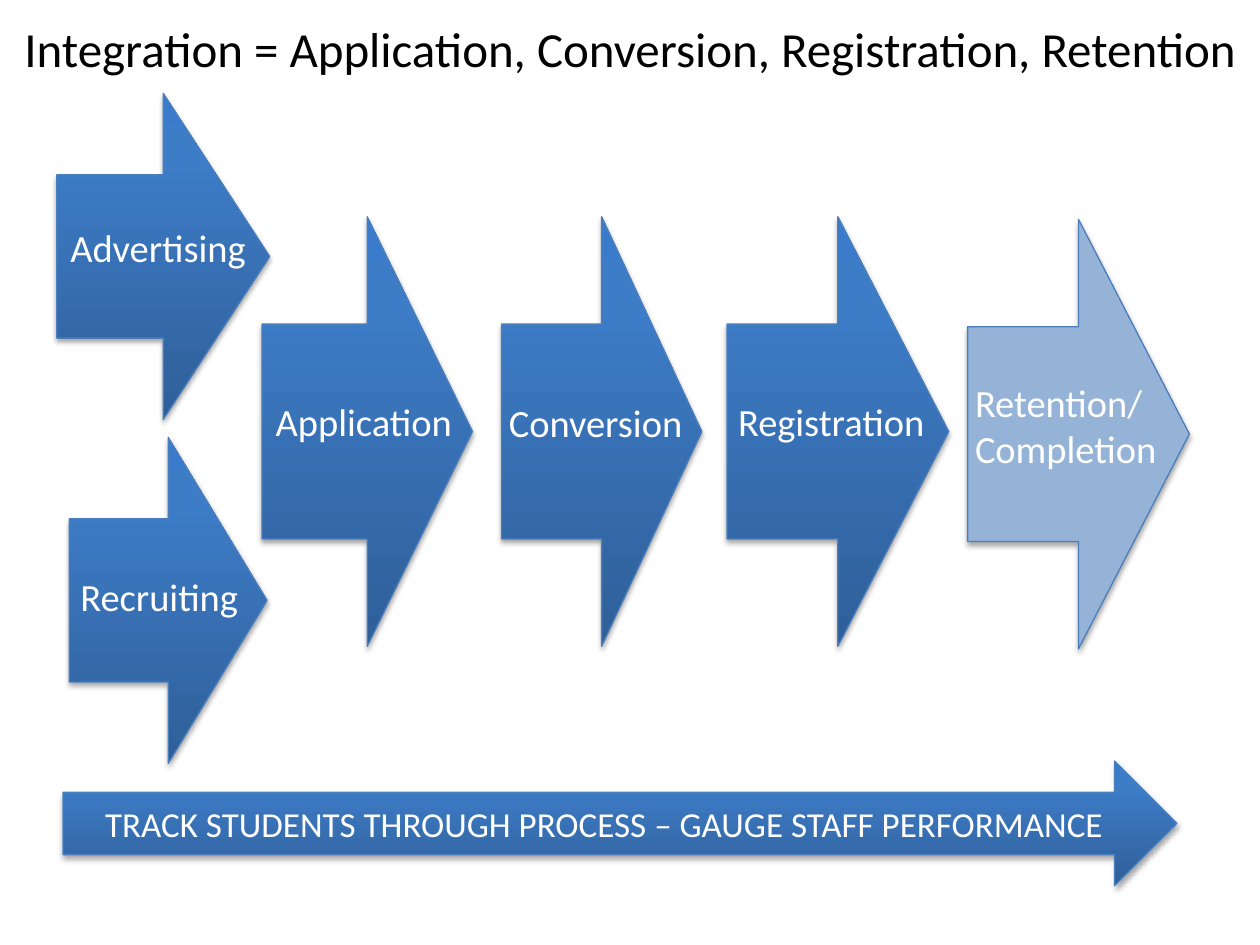
from lxml import etree
from copy import deepcopy
from pptx import Presentation
from pptx.dml.color import RGBColor
from pptx.enum import shapes, text
from pptx.oxml import ns
from pptx.util import Inches, Pt

BLACK = RGBColor(0x00, 0x00, 0x00)
WHITE = RGBColor(0xFF, 0xFF, 0xFF)
OUTLINE = RGBColor(0x4B, 0x7E, 0xBC)
PALE_BLUE = RGBColor(0x95, 0xB3, 0xD7)
BLUE_STOPS = [
    (0, RGBColor(0x2F, 0x5F, 0x99)),
    (0.8, RGBColor(0x3D, 0x7C, 0xC7)),
    (1, RGBColor(0x3A, 0x7C, 0xCB)),
]
FONT = "Calibri"

STAGES = [
    ("Advertising", (0.45, 0.74, 1.69, 2.59), (0.01, 0.99, 1.78, 0.47), None),
    ("Recruiting", (0.55, 3.47, 1.57, 2.59), (-0.01, 1.03, 3.24, 0.47), None),
    ("Application", (2.08, 1.72, 1.67, 3.41), (0.01, 1.39, 3.24, 0.47), None),
    ("Conversion", (3.98, 1.72, 1.59, 3.41), (-0.04, 1.4, 3.24, 0.47), None),
    ("Registration", (5.77, 1.72, 1.76, 3.41), (-0.01, 1.39, 3.24, 0.47), None),
    ("Retention/\nCompletion", (7.68, 1.74, 1.76, 3.41),
     (-0.04, 1.22, 3.24, 0.84), PALE_BLUE),
]


def style_text(frame, size, color, align):
    for paragraph in frame.paragraphs:
        paragraph.alignment = align
        paragraph.font.name = FONT
        paragraph.font.size = Pt(size)
        paragraph.font.color.rgb = color


def fill_gradient(arrow):
    arrow.fill.gradient()
    arrow.fill.gradient_angle = 90
    stops = arrow._element.spPr.find(".//" + ns.qn("a:gsLst"))
    stops.append(deepcopy(stops[-1]))
    for stop, (position, color) in zip(arrow.fill.gradient_stops, BLUE_STOPS):
        stop.color.rgb = color
        stop.position = position


def add_shadow(arrow):
    arrow.shadow.inherit = False
    effects = arrow._element.spPr.find(ns.qn("a:effectLst"))
    shadow = etree.SubElement(
        effects, ns.qn("a:outerShdw"), blurRad=str(Pt(3.1)),
        dist=str(Pt(1.8)), dir="5400000", rotWithShape="0")
    color = etree.SubElement(shadow, ns.qn("a:srgbClr"), val=str(BLACK))
    etree.SubElement(color, ns.qn("a:alpha"), val="35000")


def add_arrow(slide, box, solid=None):
    arrow = slide.shapes.add_shape(
        shapes.MSO_SHAPE.RIGHT_ARROW, *map(Inches, box))
    if solid is None:
        fill_gradient(arrow)
    else:
        arrow.fill.solid()
        arrow.fill.fore_color.rgb = solid
    arrow.line.color.rgb = OUTLINE
    arrow.line.width = Pt(0.75)
    add_shadow(arrow)
    return arrow


def add_stage(slide, name, box, label_box, solid):
    add_arrow(slide, box, solid)
    dx, dy, width, height = label_box
    label = slide.shapes.add_textbox(
        Inches(box[0] + dx), Inches(box[1] + dy), Inches(width), Inches(height))
    label.text_frame.word_wrap = True
    label.text_frame.text = name
    style_text(label.text_frame, 22, WHITE, text.PP_ALIGN.LEFT)


def add_tracking_bar(slide, box):
    frame = add_arrow(slide, box).text_frame
    frame.text = "TRACK STUDENTS THROUGH PROCESS – GAUGE STAFF PERFORMANCE"
    frame.vertical_anchor = text.MSO_ANCHOR.MIDDLE
    style_text(frame, 20, WHITE, text.PP_ALIGN.CENTER)


def add_title(slide, box):
    title = slide.shapes.title
    title.left, title.top, title.width, title.height = map(Inches, box)
    frame = title.text_frame
    frame.text = "Integration = Application, Conversion, Registration, Retention"
    frame.margin_left = frame.margin_right = 0
    frame.margin_top = frame.margin_bottom = 0
    frame.vertical_anchor = text.MSO_ANCHOR.TOP
    frame.auto_size = text.MSO_AUTO_SIZE.NONE
    style_text(frame, 28, BLACK, text.PP_ALIGN.CENTER)


def main():
    deck = Presentation()
    deck.slide_width, deck.slide_height = Inches(10), Inches(7.5)
    slide = deck.slides.add_slide(deck.slide_layouts.get_by_name("Title Only"))
    add_title(slide, (0, 0.15, 10, 0.94))
    for stage in STAGES:
        add_stage(slide, *stage)
    add_tracking_bar(slide, (0.5, 6.04, 8.84, 0.99))
    deck.save("out.pptx")


if __name__ == "__main__":
    main()
